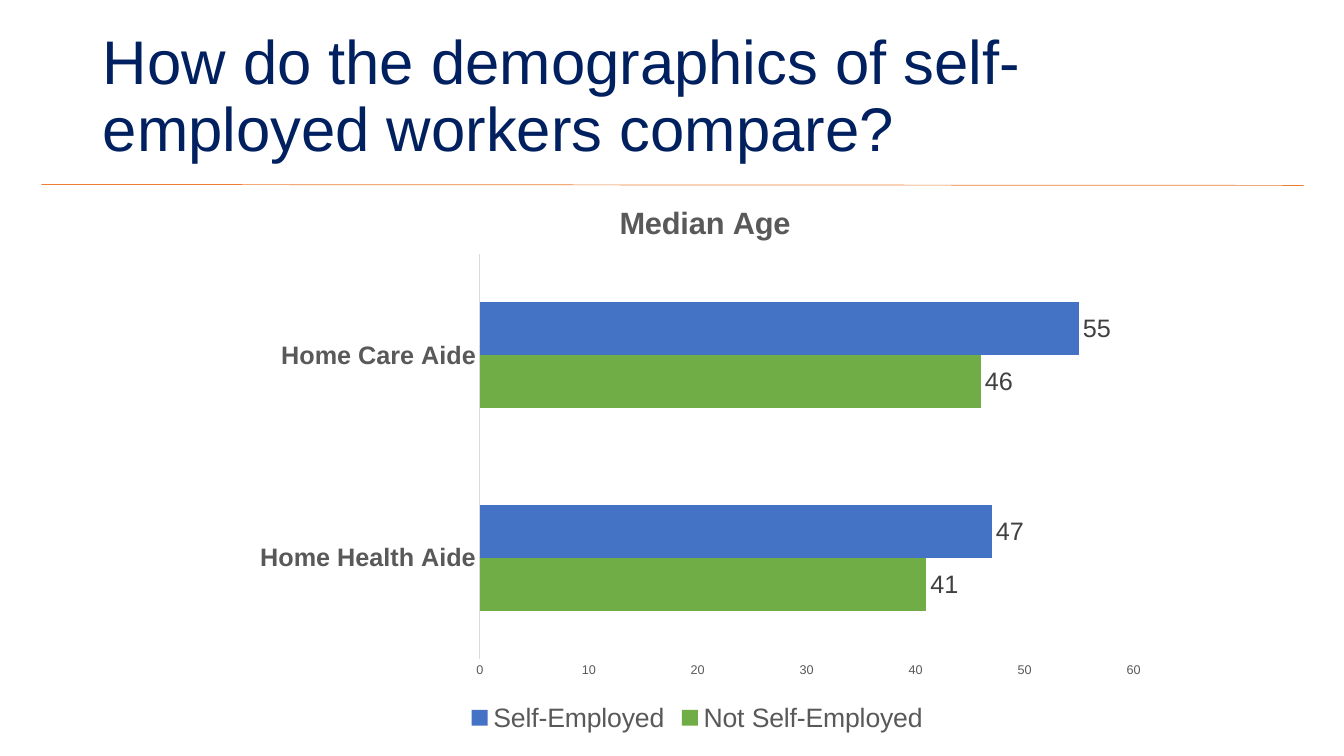
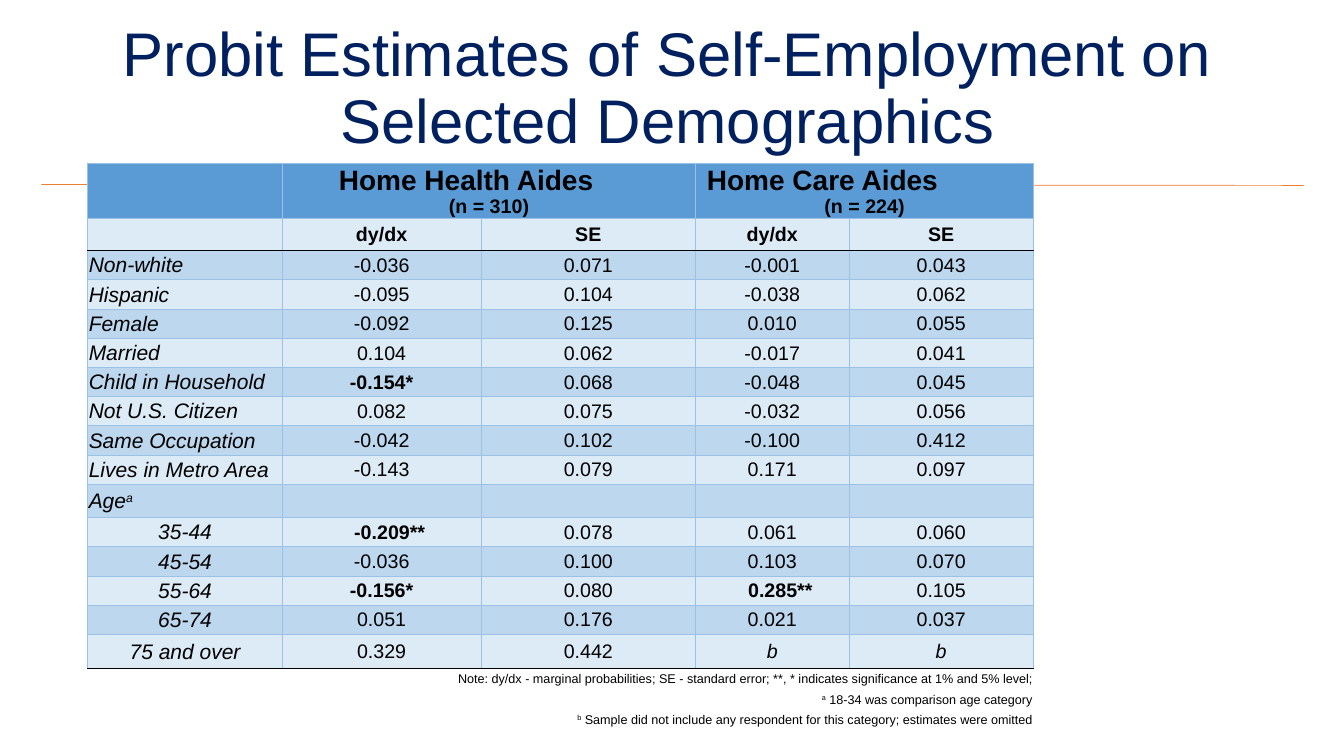
import pptx
import pptx.util
import pptx.chart.data
import pptx.dml.color
import pptx.enum.chart
import pptx.enum.shapes
import pptx.enum.text
import pptx.oxml
import pptx.oxml.ns
import lxml.etree

Pt = pptx.util.Pt
Inches = pptx.util.Inches
RGB = pptx.dml.color.RGBColor.from_string
ALIGN = pptx.enum.text.PP_ALIGN
XL = pptx.enum.chart
qn = pptx.oxml.ns.qn

COLORS = {
    "title": "002060", "rule": "ED7D31", "text": "000000",
    "self": "4472C4", "other": "70AD47",
    "gray": "595959", "label": "404040", "axis": "D9D9D9",
    "head": "5B9BD5", "light": "DDEBF7", "mid": "BDD7EE", "grid": "9BC2E6",
}

prs = pptx.Presentation()
prs.slide_width, prs.slide_height = Inches(13.33), Inches(7.5)


def box(*percents):
    sides = (prs.slide_width, prs.slide_height) * 2
    return [int(side * pct / 100) for side, pct in zip(sides, percents)]


def style(font, color, size, **values):
    font.color.rgb = RGB(COLORS[color])
    for name, value in {"name": "Arial", "size": Pt(size), **values}.items():
        setattr(font, name, value)


TITLES = [
    ("How do the demographics of self-employed workers compare?", 6.9, 3.33, ALIGN.LEFT),
    ("Probit Estimates of Self-Employment on Selected Demographics", 6.53, 2.27, ALIGN.CENTER),
]
for text, left, top, align in TITLES:
    s = prs.slides.add_slide(prs.slide_layouts[5])
    sp = s.shapes.title
    sp.left, sp.top, sp.width, sp.height = box(left, top, 86.27, 19.33)
    tf = sp.text_frame
    tf.text = text
    for name, value in {
        "word_wrap": True,
        "auto_size": pptx.enum.text.MSO_AUTO_SIZE.NONE,
        "vertical_anchor": pptx.enum.text.MSO_ANCHOR.MIDDLE,
    }.items():
        setattr(tf, name, value)
    p = tf.paragraphs[0]
    p.alignment, p.line_spacing = align, 0.9
    style(p.runs[0].font, "title", 44)
    line = s.shapes.add_connector(
        pptx.enum.shapes.MSO_CONNECTOR.STRAIGHT, *box(3.08, 24.4, 97, 24.53))
    line.line.color.rgb = RGB(COLORS["rule"])
    line.line.width = Pt(0.5)
    lxml.etree.SubElement(line._element.spPr, qn("a:effectLst"))

chart_slide, table_slide = prs.slides

data = pptx.chart.data.CategoryChartData()
data.categories = ["Home Health Aide", "Home Care Aide"]
data.add_series("Not Self-Employed", (41, 46))
data.add_series("Self-Employed", (47, 55))
chart = chart_slide.shapes.add_chart(
    XL.XL_CHART_TYPE.BAR_CLUSTERED, *box(17.48, 23.2, 68.79, 74.4), data).chart
style(chart.font, "text", 10)
chart.has_title = True
tf = chart.chart_title.text_frame
tf.text = "Median Age"
style(tf.paragraphs[0].runs[0].font, "gray", 22, bold=True)

chart.has_legend = True
chart.legend.position = XL.XL_LEGEND_POSITION.BOTTOM
chart.legend.include_in_layout = False
style(chart.legend.font, "gray", 19)

for axis, size, bold in ((chart.category_axis, 18, True), (chart.value_axis, 9, False)):
    style(axis.tick_labels.font, "gray", size, bold=bold)
    for name, value in {
        "major_tick_mark": XL.XL_TICK_MARK.NONE,
        "minor_tick_mark": XL.XL_TICK_MARK.NONE,
        "has_major_gridlines": False,
    }.items():
        setattr(axis, name, value)
chart.category_axis.format.line.color.rgb = RGB(COLORS["axis"])
chart.category_axis.format.line.width = Pt(0.75)
chart.value_axis.format.line.fill.background()
for name, value in {"minimum_scale": 0, "maximum_scale": 60, "major_unit": 10}.items():
    setattr(chart.value_axis, name, value)

plot = chart.plots[0]
plot.gap_width, plot.overlap, plot.vary_by_categories = 182, 0, False
for series, color in zip(plot.series, ("other", "self")):
    series.format.fill.solid()
    series.format.fill.fore_color.rgb = RGB(COLORS[color])
    labels = series.data_labels
    labels.show_value = True
    labels.position = XL.XL_LABEL_POSITION.OUTSIDE_END
    style(labels.font, "label", 18)

LAYOUTS = [
    ("c:chart/c:title", 1, {"xMode": "edge", "yMode": "edge", "x": 0.41, "y": 0.04}),
    ("c:chart/c:plotArea", 0, {"layoutTarget": "inner", "xMode": "edge", "yMode": "edge",
                               "x": 0.265, "y": 0.14, "w": 0.707, "h": 0.72}),
]
for where, index, values in LAYOUTS:
    parent = chart.element.xpath(where)[0]
    for old in parent.findall(qn("c:layout")):
        parent.remove(old)
    layout = pptx.oxml.parse_xml(
        '<c:layout xmlns:c="http://schemas.openxmlformats.org/drawingml/2006/chart"/>')
    manual = lxml.etree.SubElement(layout, qn("c:manualLayout"))
    for tag, value in values.items():
        lxml.etree.SubElement(manual, qn("c:" + tag)).set("val", str(value))
    parent.insert(index, layout)

ROWS = [
    ("", "Home Health Aides\n(n = 310)", "", "Home Care Aides\n(n = 224)", ""),
    ("", "dy/dx", "SE", "dy/dx", "SE"),
    ("Non-white", "-0.036", "0.071", "-0.001", "0.043"),
    ("Hispanic", "-0.095", "0.104", "-0.038", "0.062"),
    ("Female", "-0.092", "0.125", "0.010", "0.055"),
    ("Married", "0.104", "0.062", "-0.017", "0.041"),
    ("Child in Household", "-0.154*", "0.068", "-0.048", "0.045"),
    ("Not U.S. Citizen", "0.082", "0.075", "-0.032", "0.056"),
    ("Same Occupation", "-0.042", "0.102", "-0.100", "0.412"),
    ("Lives in Metro Area", "-0.143", "0.079", "0.171", "0.097"),
    ("Age^a", "", "", "", ""),
    ("35-44", "-0.209**", "0.078", "0.061", "0.060"),
    ("45-54", "-0.036", "0.100", "0.103", "0.070"),
    ("55-64", "-0.156*", "0.080", "0.285**", "0.105"),
    ("65-74", "0.051", "0.176", "0.021", "0.037"),
    ("75 and over", "0.329", "0.442", "b", "b"),
    ("Note: dy/dx - marginal probabilities; SE - standard error; "
     "**, * indicates significance at 1% and 5% level;", "", "", "", ""),
    ("^a^ 18-34 was comparison age category", "", "", "", ""),
    ("^b^ Sample did not include any respondent for this category; "
     "estimates were omitted", "", "", "", ""),
]
WIDTHS = [1.93, 1.97, 2.13, 1.52, 1.83]
HEIGHTS = [0.55, 0.3] + [0.29] * 8 + [0.33] + [0.29] * 4 + [0.34, 0.21, 0.19, 0.21]
AGE, NOTES = 10, 16
INDENTS = {"Home Health Aides": 0.55, "Home Care Aides": 0.1,
           "-0.209**": 0.16, "0.285**": 0.16}

table = table_slide.shapes.add_table(
    len(ROWS), len(WIDTHS), *box(6.53, 21.6, 70.37, 74.27)).table
table.first_row = table.horz_banding = False
for col, width in zip(table.columns, WIDTHS):
    col.width = Inches(width)
for row, height in zip(table.rows, HEIGHTS):
    row.height = Inches(height)

for i, values in enumerate(ROWS):
    for j, text in enumerate(values):
        cell = table.cell(i, j)
        for name, value in {
            "margin_left": Inches(0.01), "margin_right": Inches(0.01),
            "margin_top": Inches(0.01), "margin_bottom": 0,
            "vertical_anchor": pptx.enum.text.MSO_ANCHOR.MIDDLE,
        }.items():
            setattr(cell, name, value)

        tcPr = cell._tc.get_or_add_tcPr()
        for side in "LRTB":
            edge = i + (side == "B")
            black = side in "TB" and edge in (2, NOTES)
            ln = lxml.etree.SubElement(tcPr, qn("a:ln" + side))
            ln.set("w", str(Pt(1 if black else 0.5)))
            if i >= NOTES and not black:
                lxml.etree.SubElement(ln, qn("a:noFill"))
            else:
                fill = lxml.etree.SubElement(ln, qn("a:solidFill"))
                color = COLORS["text" if black else "grid"]
                lxml.etree.SubElement(fill, qn("a:srgbClr")).set("val", color)
        if i >= NOTES:
            cell.fill.background()
        else:
            cell.fill.solid()
            shade = "head" if i == 0 else ("mid", "light")[i % 2]
            cell.fill.fore_color.rgb = RGB(COLORS[shade])

        for k, words in enumerate(text.split("\n") if text else []):
            tf = cell.text_frame
            p = tf.paragraphs[0] if k == 0 else tf.add_paragraph()
            big = i == 0 and k == 0
            if i >= NOTES:
                p.alignment, size = ALIGN.RIGHT, 9
            elif j == 0:
                p.alignment, size = (ALIGN.LEFT if i <= AGE else ALIGN.CENTER), 15
            else:
                p.alignment, size = (ALIGN.LEFT if big else ALIGN.CENTER), (20 if big else 14)
            if words in INDENTS:
                p._p.get_or_add_pPr().set("marL", str(Inches(INDENTS[words])))
            for n, part in enumerate(words.split("^")):
                if part:
                    r = p.add_run()
                    r.text = part
                    style(r.font, "text", size,
                          bold=i < 2 or (i < NOTES and "*" in part),
                          italic=i < NOTES and (j == 0 or part == "b"))
                    if n == 1:
                        r._r.get_or_add_rPr().set("baseline", "30000")

for first, last in [((0, 1), (0, 2)), ((0, 3), (0, 4))] + [
        ((i, 0), (i, 4)) for i in range(NOTES, len(ROWS))]:
    table.cell(*first).merge(table.cell(*last))

prs.save("out.pptx")
